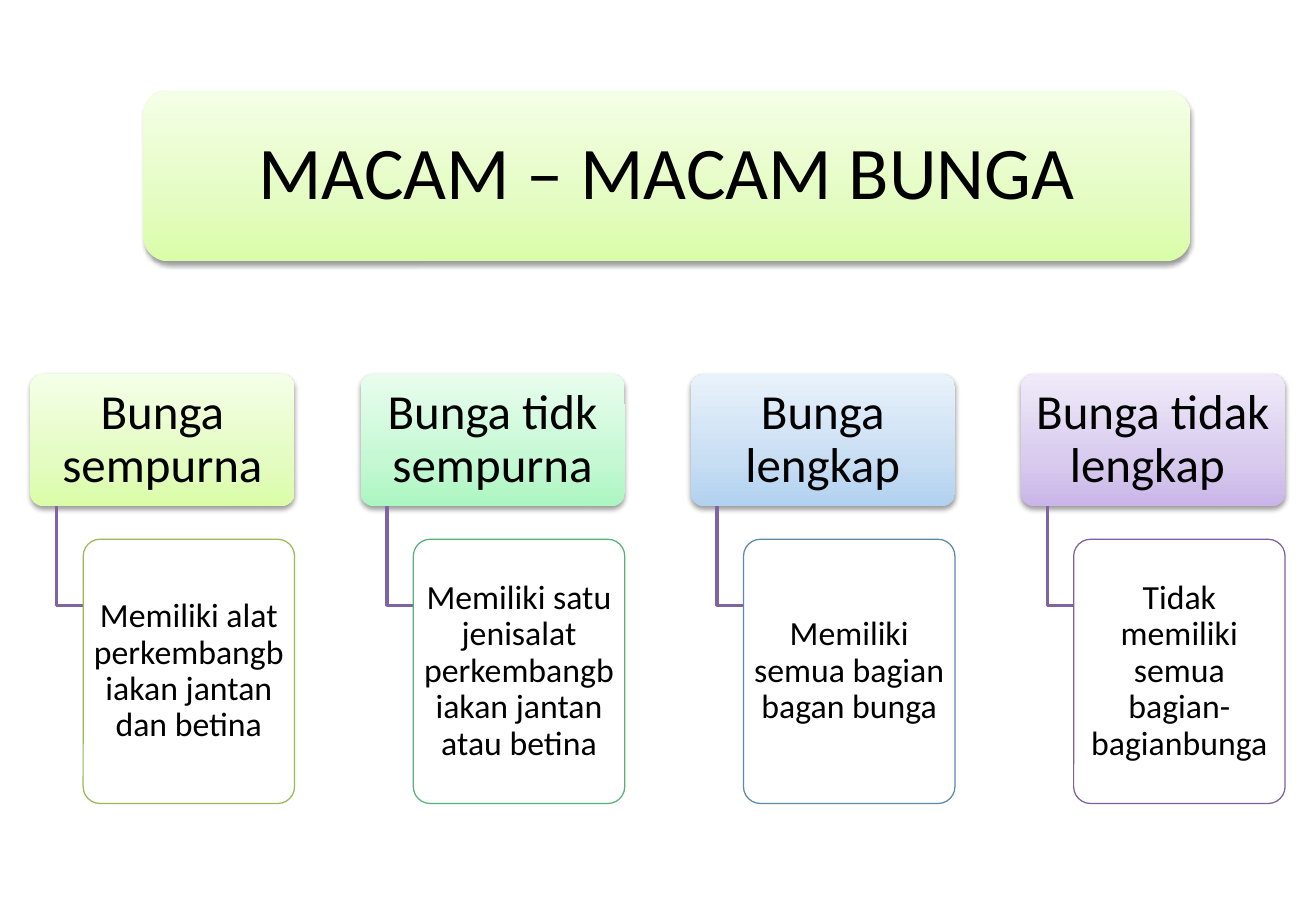
"""Builds a slide that shows the four kinds of flowers as a hierarchy."""
from copy import deepcopy

from lxml.etree import SubElement
from pptx import Presentation
from pptx.dml.color import RGBColor
from pptx.enum.shapes import MSO_SHAPE
from pptx.enum.text import MSO_ANCHOR, PP_ALIGN
from pptx.oxml.ns import qn
from pptx.util import Pt

COLORS = {
    "text": "000000",
    "shadow": "000000",
    "paper": "FFFFFF",
    "branch": "8064A2",
    "lime": ("DAFDA7", "E4FCC2", "F5FFE7"),
    "green": ("ABF6C1", "C5F8D3", "E8FDEE"),
    "blue": ("B0D1F0", "C8DEF3", "E9F2FB"),
    "purple": ("C9B5E8", "D8CBEE", "F0EAF9"),
    "lime_edge": "98B955",
    "green_edge": "58B179",
    "blue_edge": "5C89A9",
    "purple_edge": "7D60A0",
}

FLOWERS = [
    ("Bunga sempurna", "Memiliki alat perkembangbiakan jantan dan betina", "lime"),
    ("Bunga tidk sempurna", "Memiliki satu jenisalat perkembangbiakan jantan atau betina", "green"),
    ("Bunga lengkap", "Memiliki semua bagian bagan bunga", "blue"),
    ("Bunga tidak lengkap ", "Tidak memiliki semua bagian-bagianbunga", "purple"),
]


class FlowerSlide:
    font = "Calibri"
    line_spacing = 0.9
    stops = (0, 0.35, 1)
    corner_inset = 0.29

    def __init__(self, slide):
        self.shapes = slide.shapes

    def rounded(self, box, radius, margins, text, size):
        left, top, width, height = box
        card = self.shapes.add_shape(
            MSO_SHAPE.ROUNDED_RECTANGLE, Pt(left), Pt(top), Pt(width), Pt(height))
        card.adjustments[0] = radius / min(width, height)
        card.shadow.inherit = False
        frame = card.text_frame
        frame.word_wrap = True
        frame.vertical_anchor = MSO_ANCHOR.MIDDLE
        side, edge = (Pt(max(0, margin - self.corner_inset * radius)) for margin in margins)
        frame.margin_left = frame.margin_right = side
        frame.margin_top = frame.margin_bottom = edge
        paragraph = frame.paragraphs[0]
        paragraph.alignment = PP_ALIGN.CENTER
        paragraph.line_spacing = self.line_spacing
        run = paragraph.add_run()
        run.text = text
        run.font.name = self.font
        run.font.size = Pt(size)
        run.font.color.rgb = RGBColor.from_string(COLORS["text"])
        return card

    def heading(self, box, radius, margins, text, size, tone):
        card = self.rounded(box, radius, margins, text, size)
        card.line.fill.background()
        card.fill.gradient()
        card.fill.gradient_angle = 90
        properties = card._element.spPr
        stop_list = properties.find(".//" + qn("a:gsLst"))
        stop_list.append(deepcopy(stop_list[0]))
        for stop, position, color in zip(card.fill.gradient_stops, self.stops, COLORS[tone]):
            stop.position = position
            stop.color.rgb = RGBColor.from_string(color)
        shadow = SubElement(
            properties.find(qn("a:effectLst")), qn("a:outerShdw"),
            blurRad=str(Pt(3.1)), dist=str(Pt(1.6)), dir="5400000", rotWithShape="0")
        shade = SubElement(shadow, qn("a:srgbClr"), val=COLORS["shadow"])
        SubElement(shade, qn("a:alpha"), val="38000")

    def detail(self, box, radius, margins, text, size, tone):
        card = self.rounded(box, radius, margins, text, size)
        card.fill.solid()
        card.fill.fore_color.rgb = RGBColor.from_string(COLORS["paper"])
        paper = card._element.spPr.find(qn("a:solidFill"))[0]
        SubElement(paper, qn("a:alpha"), val="90000")
        card.line.color.rgb = RGBColor.from_string(COLORS[tone + "_edge"])
        card.line.width = Pt(0.75)

    def branch(self, left, top, right, bottom):
        builder = self.shapes.build_freeform(Pt(left), Pt(top))
        builder.add_line_segments(
            [(Pt(left), Pt(bottom)), (Pt(right), Pt(bottom))], close=False)
        elbow = builder.convert_to_shape()
        elbow.shadow.inherit = False
        elbow.fill.background()
        elbow.line.color.rgb = RGBColor.from_string(COLORS["branch"])
        elbow.line.width = Pt(2)


def main():
    deck = Presentation()
    deck.slide_width, deck.slide_height = Pt(780), Pt(540)
    page = FlowerSlide(deck.slides.add_slide(deck.slide_layouts[6]))

    width, height, gap = 156.6, 78.3, 39.1
    first_left, top = 18, 221.8
    indent = width / 10
    detail_top = top + height * 1.25
    for column, (kind, meaning, tone) in enumerate(FLOWERS):
        left = first_left + column * (width + gap)
        detail_left = left + 2 * indent
        page.heading((left, top, width, height), 7.8, (6.6, 5.2), kind, 29, tone)
        page.branch(left + indent, top + height, detail_left, top + height * 1.75)
        page.detail((detail_left, detail_top, width * 0.8, height * 2),
                    10, (4.3, 3.6), meaning, 20, tone)

    page.heading((85, 53.3, 620.6, 101.7), 15, (5.8, 5.8), "MACAM – MACAM BUNGA", 44, "lime")
    deck.save("out.pptx")


if __name__ == "__main__":
    main()
